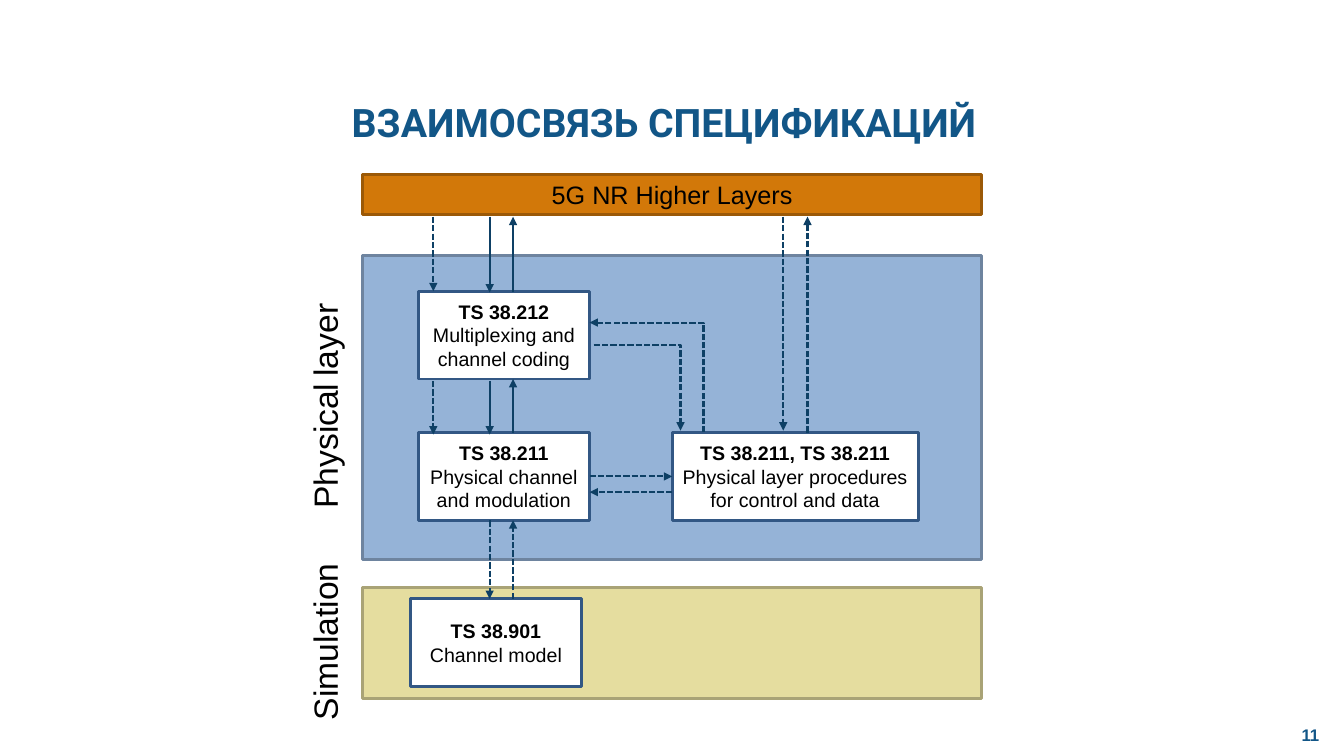
"""Builds the slide on how the 5G NR physical layer specifications relate."""
from lxml import etree
from pptx import Presentation
from pptx.dml.color import RGBColor
from pptx.enum import dml, shapes, text
from pptx.oxml import ns
from pptx.util import Cm, Pt

BLACK = RGBColor(0x00, 0x00, 0x00)
WHITE = RGBColor(0xFF, 0xFF, 0xFF)
HEADING = RGBColor(0x12, 0x56, 0x87)
ARROW = RGBColor(0x0E, 0x40, 0x65)
BOX_LINE = RGBColor(0x32, 0x57, 0x84)
ORANGE = RGBColor(0xD2, 0x78, 0x09)
ORANGE_LINE = RGBColor(0x9B, 0x59, 0x07)
BLUE = RGBColor(0x95, 0xB3, 0xD7)
BLUE_LINE = RGBColor(0x6E, 0x84, 0x9F)
SAND = RGBColor(0xE5, 0xDD, 0x9F)
SAND_LINE = RGBColor(0xA9, 0xA3, 0x76)


def add_run(paragraph, words, size, bold=False, color=BLACK, font="Arial"):
    paragraph.alignment = text.PP_ALIGN.CENTER
    run = paragraph.add_run()
    run.text = words
    run.font.name = font
    run.font.size = Pt(size)
    run.font.bold = bold
    run.font.color.rgb = color


def add_box(left, top, width, height, fill, line):
    shape = slide.shapes.add_shape(
        shapes.MSO_SHAPE.RECTANGLE, Cm(left), Cm(top), Cm(width), Cm(height))
    shape.shadow.inherit = False
    shape.fill.solid()
    shape.fill.fore_color.rgb = fill
    shape.line.color.rgb = line
    shape.line.width = Pt(2)
    frame = shape.text_frame
    frame.word_wrap = True
    frame.vertical_anchor = text.MSO_ANCHOR.MIDDLE
    frame.margin_left = frame.margin_right = Cm(0.2)
    return shape


presentation = Presentation()
presentation.slide_width = Cm(33.87)
presentation.slide_height = Cm(19.05)
slide = presentation.slides.add_slide(presentation.slide_layouts[5])

title = slide.shapes.title
title.left, title.top, title.width, title.height = Cm(3.33), Cm(2.34), Cm(26.8), Cm(1.98)
title.text_frame.auto_size = text.MSO_AUTO_SIZE.NONE
title.text_frame.vertical_anchor = text.MSO_ANCHOR.TOP
add_run(title.text_frame.paragraphs[0], "ВЗАИМОСВЯЗЬ СПЕЦИФИКАЦИЙ", 28, True, HEADING, "Roboto")

number = slide.shapes.add_textbox(Cm(32.18), Cm(18.0), Cm(1.69), Cm(1.05))
number.text_frame.word_wrap = True
number.text_frame.vertical_anchor = text.MSO_ANCHOR.MIDDLE
add_run(number.text_frame.paragraphs[0], "11", 12, True, HEADING)

add_box(9.14, 6.43, 15.6, 7.67, BLUE, BLUE_LINE)
higher_layers = add_box(9.14, 4.39, 15.6, 1.02, ORANGE, ORANGE_LINE)
add_run(higher_layers.text_frame.paragraphs[0], "5G NR Higher Layers", 18)
add_box(9.14, 14.81, 15.6, 2.79, SAND, SAND_LINE)

side_labels = [
    (5.92, 15.54, 4.52, [("Simulation", 24)]),
    (5.31, 9.6, 5.74, [("Physical", 24), (" ", 18), ("layer", 24)]),
]
for left, top, width, pieces in side_labels:
    label = slide.shapes.add_textbox(Cm(left), Cm(top), Cm(width), Cm(1.27))
    label.rotation = 270
    label.text_frame.word_wrap = False
    for words, size in pieces:
        add_run(label.text_frame.paragraphs[0], words, size)

specifications = [
    ("coding", 10.54, 7.34, 4.32, "TS 38.212", "Multiplexing and channel coding"),
    ("modulation", 10.54, 10.9, 4.32, "TS 38.211", "Physical channel and modulation"),
    ("channel", 10.34, 15.09, 4.32, "TS 38.901", "Channel model"),
    ("procedures", 16.94, 10.9, 6.2, "TS 38.211, TS 38.211",
     "Physical layer procedures for control and data"),
]
boxes = {}
for name, left, top, width, code, subject in specifications:
    boxes[name] = add_box(left, top, width, 2.21, WHITE, BOX_LINE)
    frame = boxes[name].text_frame
    add_run(frame.paragraphs[0], code, 14, True)
    add_run(frame.add_paragraph(), subject, 14)

arrows = [
    (12.34, 5.46, 12.34, 7.37, False, None),
    (12.93, 7.37, 12.93, 5.46, False, None),
    (12.34, 9.6, 12.34, 10.95, False, None),
    (12.93, 10.9, 12.93, 9.55, False, None),
    (10.92, 9.6, 10.92, 10.95, True, None),
    (10.92, 5.46, 10.92, 7.34, True, None),
    (14.96, 8.69, 17.15, 10.85, True, 100000),
    (17.73, 10.9, 14.86, 8.13, True, 0),
    (19.74, 5.46, 19.74, 10.85, True, None),
    (20.35, 10.9, 20.35, 5.46, True, None),
    (16.94, 12.4, 14.86, 12.4, True, None),
    (12.34, 13.11, 12.34, 15.09, True, None),
    (12.93, 15.09, 12.93, 13.11, True, None),
    (14.86, 12.0, 16.94, 12.0, True, None),
]
for x1, y1, x2, y2, dashed, bend in arrows:
    kind = shapes.MSO_CONNECTOR.STRAIGHT if bend is None else shapes.MSO_CONNECTOR.ELBOW
    arrow = slide.shapes.add_connector(kind, Cm(x1), Cm(y1), Cm(x2), Cm(y2))
    arrow.line.color.rgb = ARROW
    arrow.line.width = Pt(1.5)
    if dashed:
        arrow.line.dash_style = dml.MSO_LINE.SQUARE_DOT
    properties = arrow.element.spPr
    etree.SubElement(properties.find(ns.qn("a:ln")), ns.qn("a:tailEnd"), type="triangle")
    etree.SubElement(properties, ns.qn("a:effectLst"))
    if bend is not None:
        adjustments = properties.find(ns.qn("a:prstGeom")).find(ns.qn("a:avLst"))
        etree.SubElement(adjustments, ns.qn("a:gd"), name="adj1", fmla=f"val {bend}")

arrow.begin_connect(boxes["modulation"], 3)
arrow.end_connect(boxes["procedures"], 1)

presentation.save("out.pptx")
